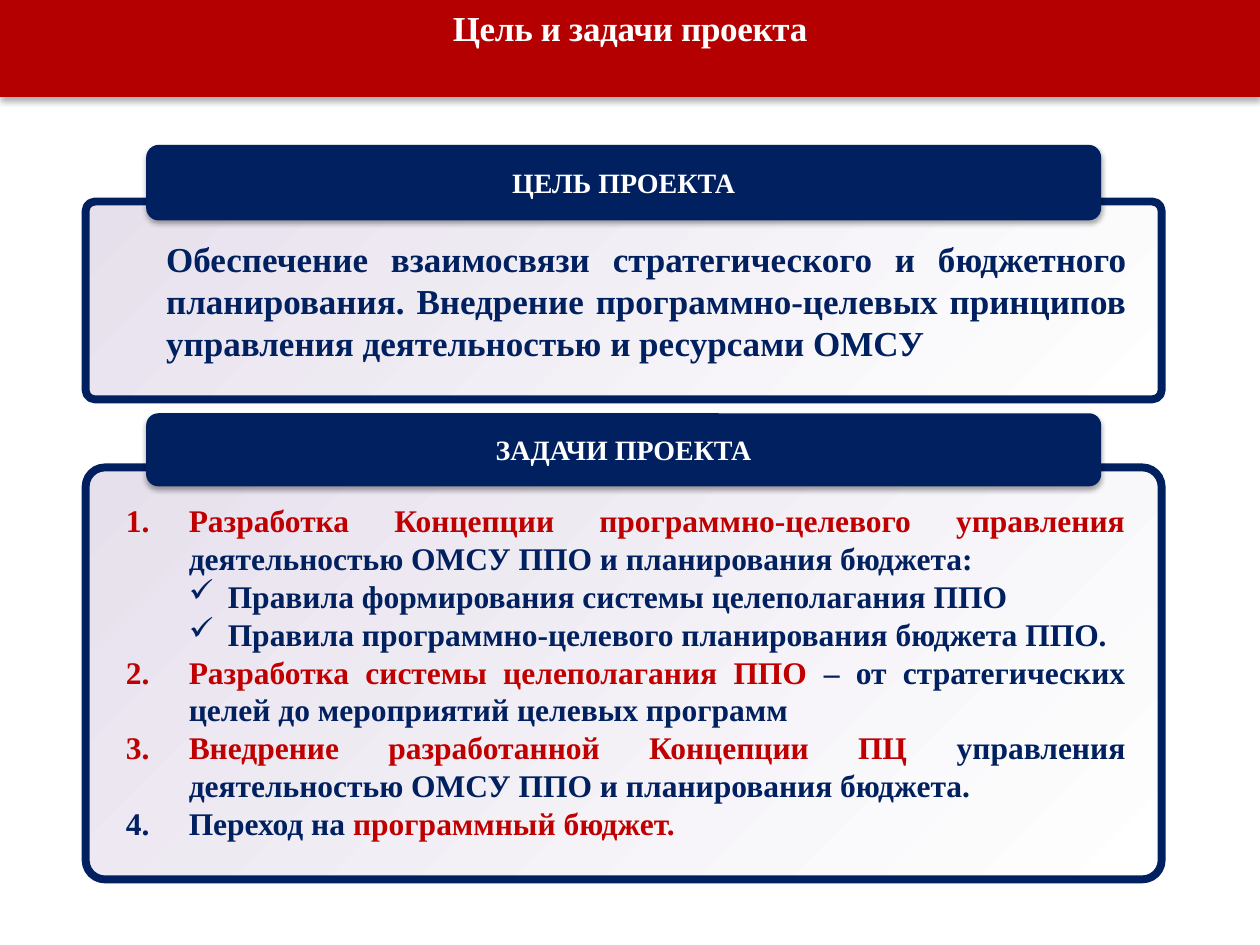
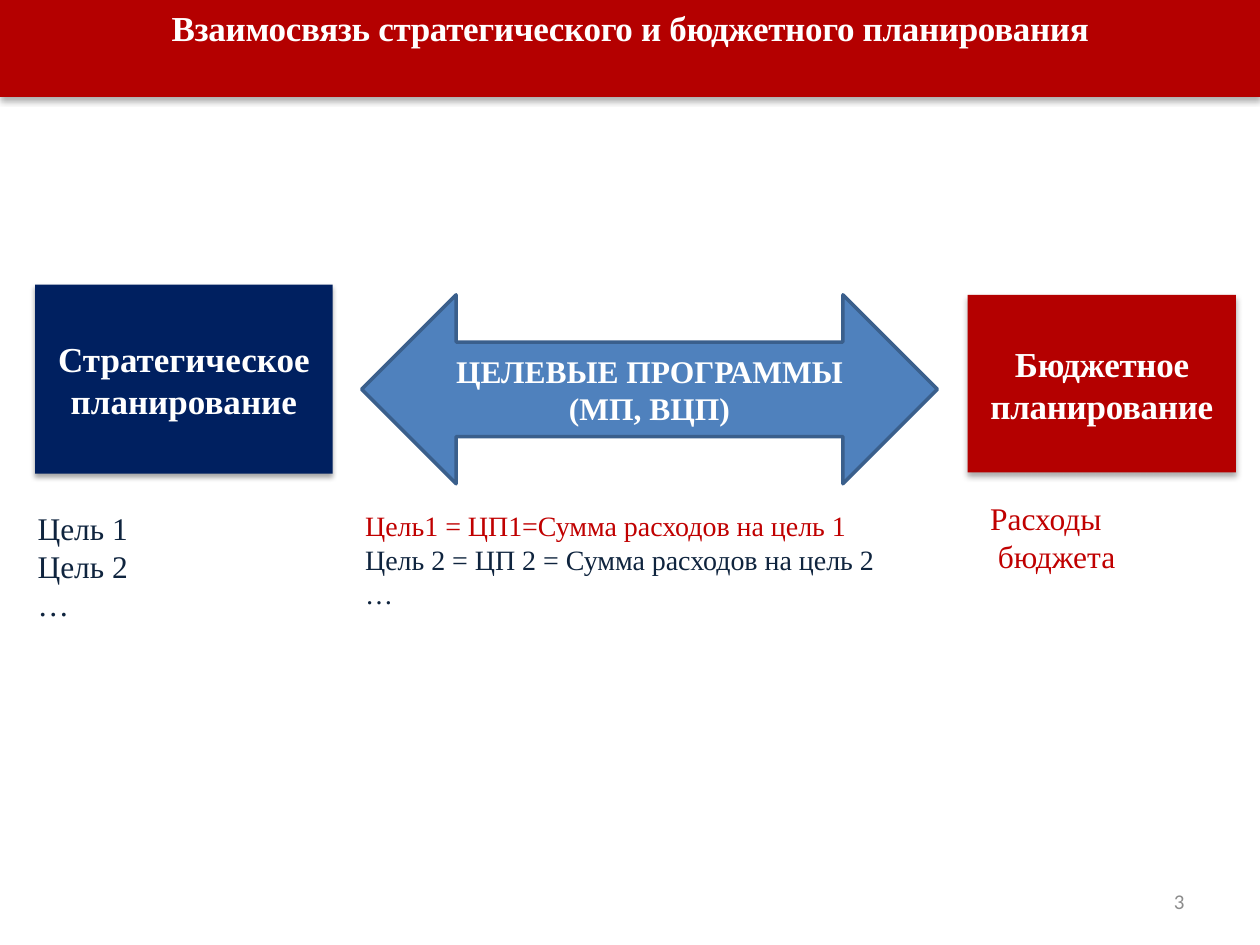
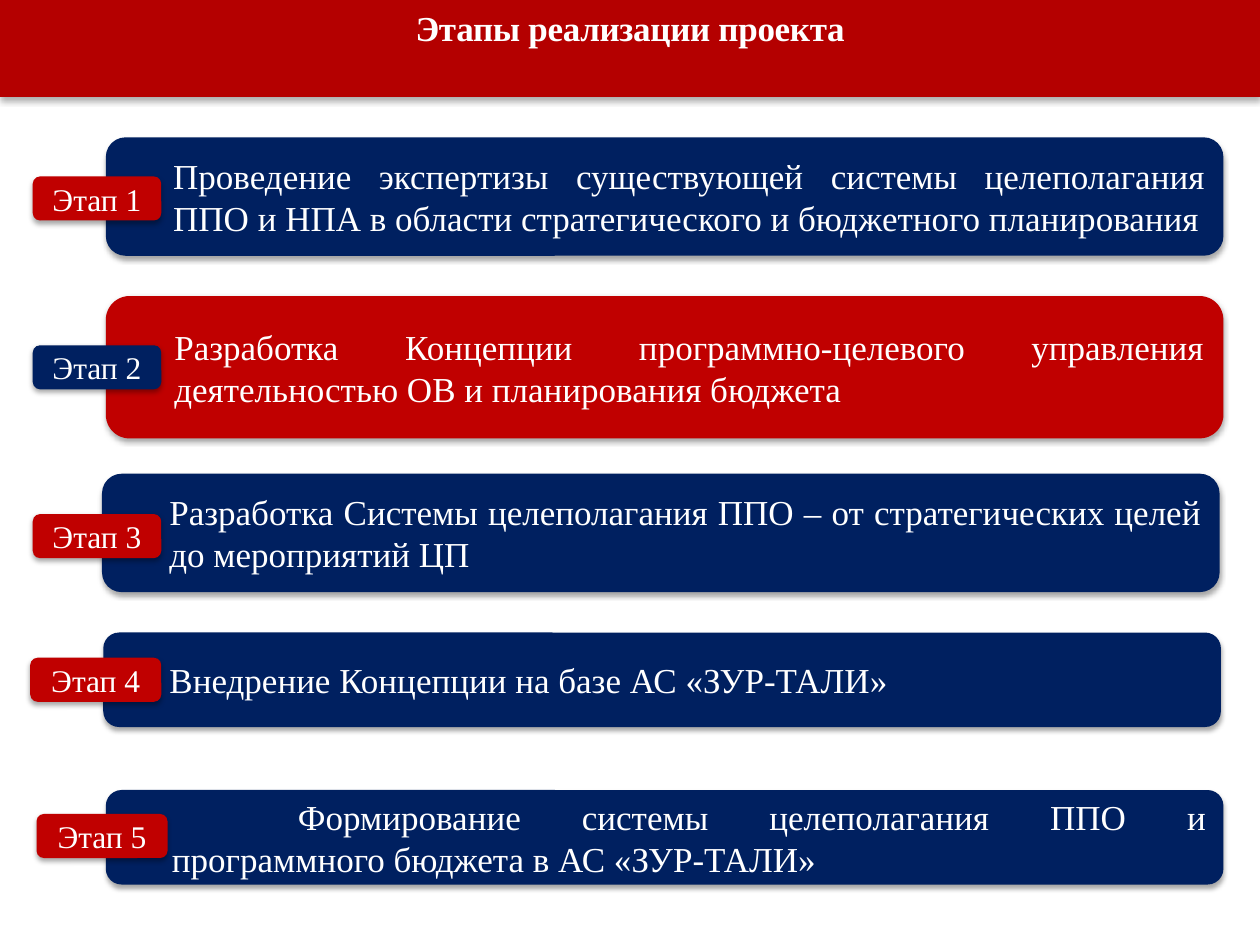
from dataclasses import dataclass

from lxml import etree
from pptx import Presentation
from pptx.dml.color import RGBColor
from pptx.enum.shapes import MSO_SHAPE
from pptx.enum.text import MSO_ANCHOR, MSO_AUTO_SIZE, PP_ALIGN
from pptx.oxml.ns import qn
from pptx.shapes.autoshape import Shape
from pptx.slide import Slide
from pptx.text.text import Font, TextFrame, _Paragraph
from pptx.util import Inches, Pt

RECT = MSO_SHAPE.RECTANGLE
ROUNDED = MSO_SHAPE.ROUNDED_RECTANGLE
DOUBLE_ARROW = MSO_SHAPE.LEFT_RIGHT_ARROW
TOP, MIDDLE = MSO_ANCHOR.TOP, MSO_ANCHOR.MIDDLE
LEFT, CENTER, RIGHT, JUSTIFY = PP_ALIGN.LEFT, PP_ALIGN.CENTER, PP_ALIGN.RIGHT, PP_ALIGN.JUSTIFY
NO_AUTOFIT = MSO_AUTO_SIZE.NONE

WHITE = RGBColor(0xFF, 0xFF, 0xFF)
BLACK = RGBColor(0x00, 0x00, 0x00)
NAVY = RGBColor(0x00, 0x20, 0x60)
INK = RGBColor(0x0F, 0x24, 0x3E)
RED = RGBColor(0xC0, 0x00, 0x00)
BAND_RED = RGBColor(0xB4, 0x00, 0x00)
LAVENDER = RGBColor(0xE6, 0xE0, 0xEC)
ARROW_BLUE = RGBColor(0x4F, 0x81, 0xBD)
ARROW_EDGE = RGBColor(0x3A, 0x5F, 0x8C)
GRAY = RGBColor(0x8C, 0x8C, 0x8C)

SERIF = "Times New Roman"
TITLE_ONLY = 5


@dataclass(frozen=True)
class Box:
    left: float
    top: float
    width: float
    height: float

    def lengths(self) -> tuple[int, ...]:
        return tuple(Inches(v) for v in (self.left, self.top, self.width, self.height))


@dataclass(frozen=True)
class Style:
    size: float
    color: RGBColor
    bold: bool = False
    align: PP_ALIGN = LEFT
    font: str = SERIF
    condensed: bool = False


@dataclass(frozen=True)
class Shadow:
    alpha: int
    blur: float
    distance: float


@dataclass(frozen=True)
class Panel:
    heading: str
    header: Box
    body: Box


@dataclass(frozen=True)
class Task:
    spans: tuple[tuple[str, RGBColor], ...]
    checked: bool = False


@dataclass(frozen=True)
class Stage:
    text: str
    bar: Box
    badge: Box
    bar_color: RGBColor = NAVY
    badge_color: RGBColor = RED
    first_line: float = 0


SOFT_SHADOW = Shadow(35, 3.1, 1.8)
BAND_SHADOW = Shadow(32, 3.5, 2.2)
BAND = Box(0, 0, 10, 0.77)
BAND_TEXT = Style(20, WHITE, True, CENTER, condensed=True)

PANELS = (
    Panel("ЦЕЛЬ ПРОЕКТА", Box(1.16, 1.15, 7.58, 0.6), Box(0.68, 1.6, 8.54, 1.57)),
    Panel("ЗАДАЧИ ПРОЕКТА", Box(1.16, 3.28, 7.58, 0.58), Box(0.68, 3.71, 8.54, 3.27)),
)
GOAL = (
    "Обеспечение взаимосвязи стратегического и бюджетного планирования. "
    "Внедрение программно-целевых принципов управления деятельностью и ресурсами ОМСУ"
)
TASKS = (
    Task((("Разработка Концепции программно-целевого управления ", RED),
          ("деятельностью ОМСУ ППО и планирования бюджета:", NAVY))),
    Task((("Правила формирования системы целеполагания ППО", NAVY),), checked=True),
    Task((("Правила программно-целевого планирования бюджета ППО.", NAVY),), checked=True),
    Task((("Разработка системы целеполагания ППО ", RED),
          ("– от стратегических целей до мероприятий целевых программ", NAVY))),
    Task((("Внедрение разработанной Концепции ПЦ ", RED),
          ("управления деятельностью ОМСУ ППО и планирования бюджета.", NAVY))),
    Task((("Переход на ", NAVY), ("программный бюджет.", RED))),
)
STAGES = (
    Stage("Проведение экспертизы существующей системы целеполагания ППО и НПА "
          "в области стратегического и бюджетного планирования",
          Box(0.84, 1.09, 8.87, 0.94), Box(0.26, 1.4, 1.02, 0.35)),
    Stage("Разработка Концепции программно-целевого управления деятельностью ОВ "
          "и планирования бюджета",
          Box(0.84, 2.35, 8.87, 1.13), Box(0.26, 2.74, 1.02, 0.35), RED, NAVY),
    Stage("Разработка Системы целеполагания ППО – от стратегических целей "
          "до мероприятий ЦП",
          Box(0.81, 3.76, 8.87, 0.94), Box(0.26, 4.08, 1.02, 0.35)),
    Stage("Внедрение Концепции на базе АС «ЗУР-ТАЛИ»",
          Box(0.82, 5.02, 8.87, 0.75), Box(0.24, 5.22, 1.04, 0.35)),
    Stage("Формирование системы целеполагания ППО и программного бюджета "
          "в АС «ЗУР-ТАЛИ»",
          Box(0.84, 6.27, 8.87, 0.75), Box(0.29, 6.46, 1.04, 0.35), first_line=1),
)


def format_font(font: Font, style: Style) -> None:
    font.name = style.font
    font.size = Pt(style.size)
    font.bold = style.bold
    font.color.rgb = style.color


def write(frame: TextFrame, text: str, style: Style, anchor: MSO_ANCHOR) -> None:
    frame.text = text
    frame.word_wrap = True
    frame.auto_size = NO_AUTOFIT
    frame.vertical_anchor = anchor
    for paragraph in frame.paragraphs:
        paragraph.alignment = style.align
        for run in paragraph.runs:
            format_font(run.font, style)
            if style.condensed:
                run._r.get_or_add_rPr().set("spc", "-20")


def set_indent(paragraph: _Paragraph, left: float, first_line: float) -> None:
    properties = paragraph._p.get_or_add_pPr()
    properties.set("marL", str(Inches(left)))
    properties.set("indent", str(Inches(first_line)))


def cast_shadow(shape: Shape, shadow: Shadow) -> None:
    shape.shadow.inherit = False
    effects = shape._element.spPr.find(qn("a:effectLst"))
    outer = etree.SubElement(
        effects, qn("a:outerShdw"), blurRad=str(Pt(shadow.blur)),
        dist=str(Pt(shadow.distance)), dir="5400000", rotWithShape="0")
    color = etree.SubElement(outer, qn("a:srgbClr"), val=str(BLACK))
    etree.SubElement(color, qn("a:alpha"), val=str(shadow.alpha * 1000))


def add_block(slide: Slide, kind: MSO_SHAPE, box: Box, fill: RGBColor, text: str,
              style: Style, shadow: Shadow | None = SOFT_SHADOW) -> Shape:
    block = slide.shapes.add_shape(kind, *box.lengths())
    block.fill.solid()
    block.fill.fore_color.rgb = fill
    block.line.fill.background()
    block.shadow.inherit = False
    if shadow:
        cast_shadow(block, shadow)
    write(block.text_frame, text, style, MIDDLE)
    return block


def add_text(slide: Slide, box: Box, text: str, style: Style,
             anchor: MSO_ANCHOR = TOP) -> TextFrame:
    frame = slide.shapes.add_textbox(*box.lengths()).text_frame
    write(frame, text, style, anchor)
    return frame


def add_titled_slide(deck: Presentation, title: str) -> Slide:
    slide = deck.slides.add_slide(deck.slide_layouts[TITLE_ONLY])
    band = slide.shapes.title
    band.left, band.top, band.width, band.height = BAND.lengths()
    band.fill.solid()
    band.fill.fore_color.rgb = BAND_RED
    cast_shadow(band, BAND_SHADOW)
    write(band.text_frame, title, BAND_TEXT, TOP)
    return slide


def add_panel(slide: Slide, panel: Panel) -> None:
    body = slide.shapes.add_shape(ROUNDED, *panel.body.lengths())
    body.adjustments[0] = 0.047
    body.shadow.inherit = False
    body.fill.gradient()
    body.fill.gradient_angle = 315
    for stop, color in zip(body.fill.gradient_stops, (LAVENDER, WHITE)):
        stop.color.rgb = color
    body.line.color.rgb = NAVY
    body.line.width = Pt(4.5)
    add_block(slide, ROUNDED, panel.header, NAVY, panel.heading,
              Style(16, WHITE, True, CENTER))


def add_tasks(slide: Slide) -> None:
    lines = "\n".join("" for _ in TASKS)
    frame = add_text(slide, Box(0.9, 3.93, 8.13, 3.0), lines,
                     Style(18, NAVY, True, JUSTIFY))
    for paragraph, task in zip(frame.paragraphs, TASKS):
        for text, color in task.spans:
            run = paragraph.add_run()
            run.text = text
            format_font(run.font, Style(18, color, True))
        if task.checked:
            paragraph.level = 1
            set_indent(paragraph, 0.81, -0.31)
            etree.SubElement(paragraph._p.pPr, qn("a:buChar"), char="✓")
        else:
            set_indent(paragraph, 0.5, -0.5)
            etree.SubElement(paragraph._p.pPr, qn("a:buAutoNum"), type="arabicPeriod")


def build_goal_slide(deck: Presentation) -> None:
    slide = add_titled_slide(deck, "Цель и задачи проекта")
    for panel in PANELS:
        add_panel(slide, panel)
    add_text(slide, Box(1.22, 1.83, 7.82, 1.11), GOAL,
             Style(20, NAVY, True, JUSTIFY), MIDDLE)
    add_tasks(slide)


def build_link_slide(deck: Presentation) -> None:
    slide = add_titled_slide(deck, "Взаимосвязь стратегического и бюджетного планирования")
    add_text(slide, Box(7.17, 6.95, 2.33, 0.4), "3",
             Style(12, GRAY, align=RIGHT, font="Calibri"), MIDDLE)

    budget = add_block(slide, RECT, Box(7.68, 2.34, 2.13, 1.41), BAND_RED,
                       "Бюджетное планирование", BAND_TEXT, BAND_SHADOW)
    budget.text_frame.vertical_anchor = TOP
    budget.text_frame.margin_top = Inches(0.38)
    add_block(slide, RECT, Box(0.28, 2.26, 2.36, 1.5), NAVY,
              "Стратегическое планирование", Style(20, WHITE, True, CENTER))
    programs = add_block(slide, DOUBLE_ARROW, Box(2.87, 2.34, 4.57, 1.5), ARROW_BLUE,
                         "ЦЕЛЕВЫЕ ПРОГРАММЫ (МП, ВЦП)",
                         Style(18, WHITE, True, CENTER), shadow=None)
    programs.line.color.rgb = ARROW_EDGE
    programs.line.width = Pt(2)

    add_text(slide, Box(0.2, 3.99, 2.5, 1.01), "Цель 1\nЦель 2\n…", Style(18, INK))
    add_text(slide, Box(7.76, 3.91, 2.2, 1.01), "Расходы\n бюджета", Style(18, RED))
    sums = add_text(
        slide, Box(2.8, 3.99, 4.9, 1.18),
        "Цель1 = ЦП1=Сумма расходов на цель 1\n"
        "Цель 2 = ЦП 2 = Сумма расходов на цель 2\n…", Style(16, INK))
    sums.paragraphs[0].runs[0].font.color.rgb = RED


def build_stages_slide(deck: Presentation) -> None:
    slide = add_titled_slide(deck, "Этапы реализации проекта")
    for number, stage in enumerate(STAGES, start=1):
        bar = add_block(slide, ROUNDED, stage.bar, stage.bar_color, stage.text,
                        Style(20, WHITE, align=JUSTIFY))
        set_indent(bar.text_frame.paragraphs[0], 0.39, stage.first_line)
        add_block(slide, ROUNDED, stage.badge, stage.badge_color, f"Этап {number}",
                  Style(18, WHITE, align=CENTER))


def main() -> None:
    deck = Presentation()
    deck.slide_width, deck.slide_height = Inches(10), Inches(7.5)
    build_goal_slide(deck)
    build_link_slide(deck)
    build_stages_slide(deck)
    deck.save("out.pptx")


if __name__ == "__main__":
    main()
